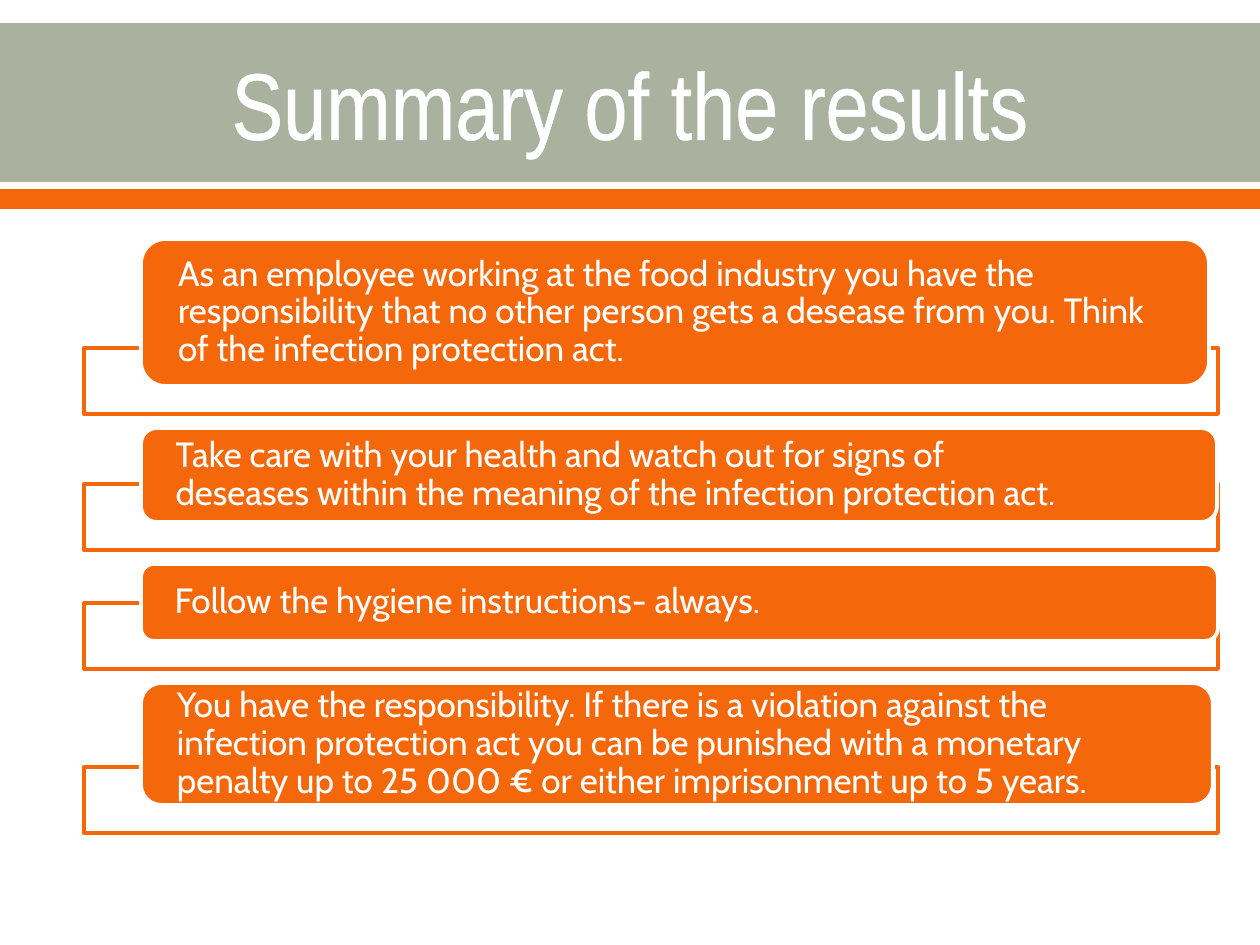
"""Build the summary slide: a banner title over four framed cards."""
from lxml import etree
from pptx import Presentation, util as u
from pptx.dml.color import RGBColor
from pptx.enum import shapes, text
from pptx.oxml import ns

ORANGE, SAGE, WHITE = "F4680B", "ABB19F", "FFFFFF"
KIND = shapes.MSO_SHAPE
CARDS = [
    (1068, 147, "As an employee working at the food industry you have the "
     "responsibility that no other person gets a desease from you. "
     "Think of the infection protection act."),
    (1076, 94, "Take care with your health and watch out for signs of\v"
     "deseases within the meaning of the infection protection act."),
    (1077, 77, "Follow the hygiene instructions- always."),
    (1072, 122, "You have the responsibility. If there is a violation against "
     "the infection protection act you can be punished with a monetary "
     "penalty up to 25 000 € or either imprisonment up to 5 years."),
]


def px(*nums):
    return [u.Emu(round(n * 914400 / 126)) for n in nums]


def draw(kind, box, fill, line=None):
    shape = slide.shapes.add_shape(kind, *px(*box))
    shape.shadow.inherit = False
    shape.fill.solid()
    shape.fill.fore_color.rgb = RGBColor.from_string(fill)
    if line:
        shape.line.color.rgb = RGBColor.from_string(line)
        shape.line.width = u.Pt(2.22)
    else:
        shape.line.fill.background()
    return shape


deck = Presentation()
deck.slide_width, deck.slide_height = px(1260, 945)
slide = deck.slides.add_slide(deck.slide_layouts[5])

draw(KIND.RECTANGLE, (0, 23, 1260, 159), SAGE)
draw(KIND.RECTANGLE, (0, 189, 1260, 20), ORANGE)

title = slide.shapes.title
slide.shapes._spTree.append(title._element)
title.left, title.top, title.width, title.height = px(63, 25, 1134, 154)
frame = title.text_frame
frame.text = "Summary of the results"
frame.auto_size = text.MSO_AUTO_SIZE.NONE
frame.vertical_anchor = text.MSO_ANCHOR.MIDDLE
para = frame.paragraphs[0]
para.alignment = text.PP_ALIGN.CENTER
run = para.runs[0]
for key, val in {"name": "Arial Narrow", "size": u.Pt(54)}.items():
    setattr(run.font, key, val)
run.font.color.rgb = RGBColor.from_string(WHITE)
edge = etree.Element(ns.qn("a:ln"), w=str(u.Pt(1.1)))
paint = etree.SubElement(edge, ns.qn("a:solidFill"))
etree.SubElement(paint, ns.qn("a:srgbClr"), val=WHITE)
run._r.get_or_add_rPr().insert(0, edge)

inset = px(30)[0]
top = 239
for width, height, words in CARDS:
    base = top + height
    back = draw(KIND.RECTANGLE, (84, base - 38, 1134, 66), WHITE, ORANGE)
    tint = back._element.spPr.find(".//" + ns.qn("a:srgbClr"))
    etree.SubElement(tint, ns.qn("a:alpha"), val="90000")

    card = draw(KIND.ROUNDED_RECTANGLE, (141, top, width, height), ORANGE, WHITE)
    frame = card.text_frame
    look = {"word_wrap": True, "vertical_anchor": text.MSO_ANCHOR.MIDDLE,
            "margin_left": inset, "margin_right": inset,
            "margin_top": 0, "margin_bottom": 0}
    for key, val in look.items():
        setattr(frame, key, val)
    para = frame.paragraphs[0]
    para.text = words
    para.alignment = text.PP_ALIGN.LEFT
    para.line_spacing = 0.9
    for run in para.runs:
        for key, val in {"name": "Cabin", "size": u.Pt(20)}.items():
            setattr(run.font, key, val)
        run.font.color.rgb = RGBColor.from_string(WHITE)
    top = base + 42

deck.save("out.pptx")
